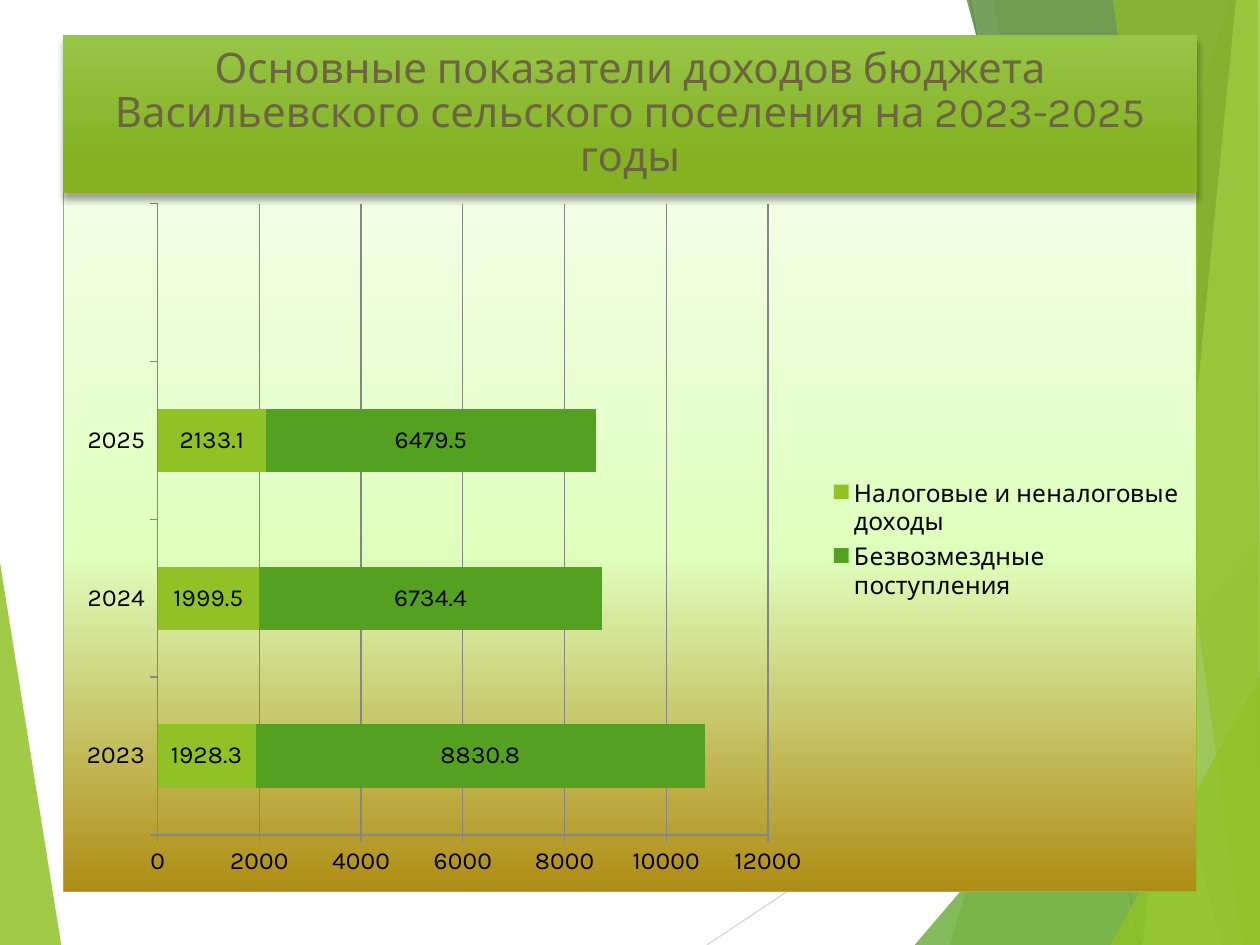
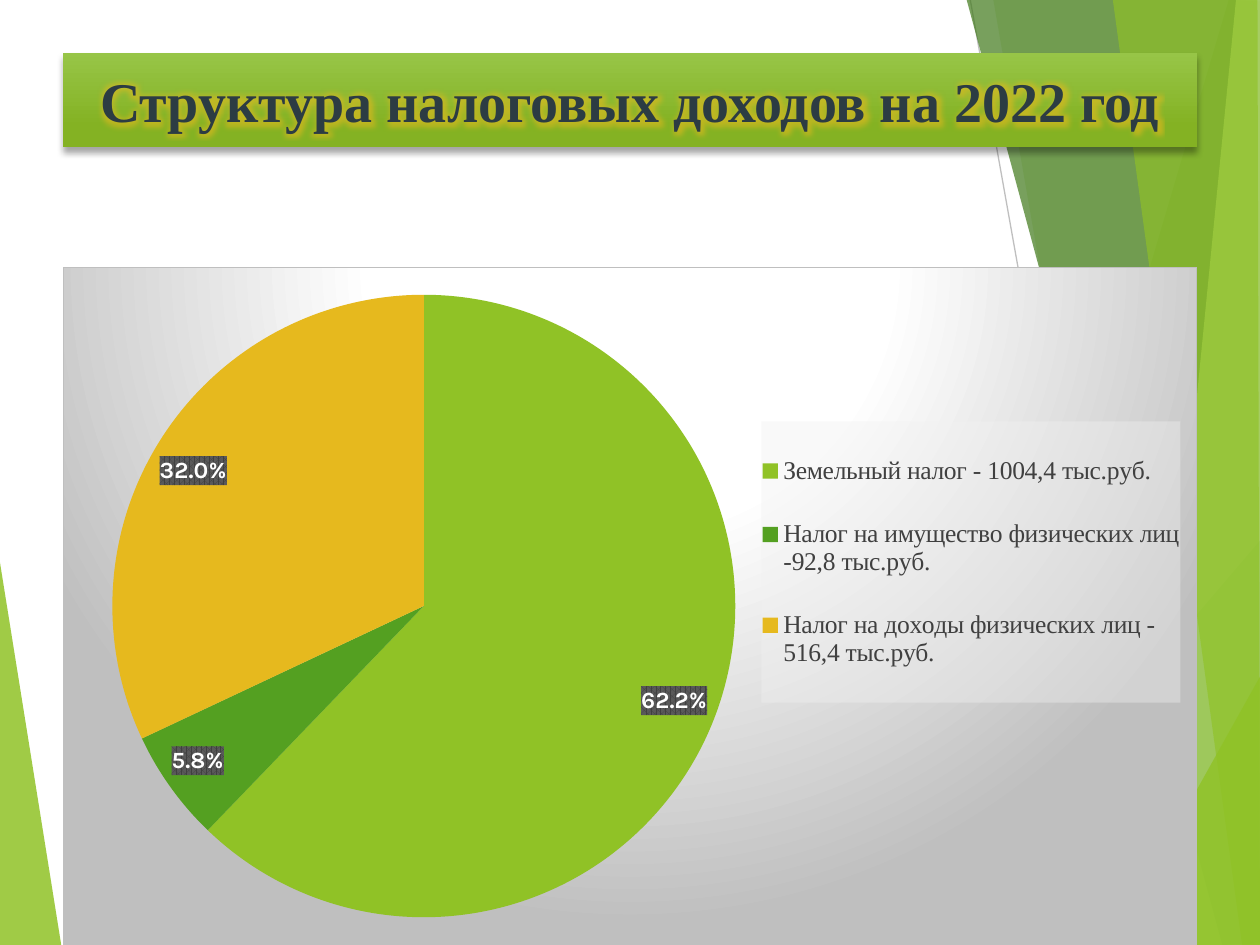
"""Build two slides on the budget revenues of a rural settlement."""
from pptx import Presentation
from pptx.chart.data import CategoryChartData as ChartData
from pptx.dml.color import RGBColor as RGB
from pptx.enum.chart import XL_CHART_TYPE as ChartType
from pptx.enum.chart import XL_LABEL_POSITION as LabelPos
from pptx.enum.chart import XL_LEGEND_POSITION as LegendPos
from pptx.enum.chart import XL_TICK_MARK as Tick
from pptx.enum.shapes import MSO_CONNECTOR as Connector
from pptx.enum.text import MSO_ANCHOR as Anchor
from pptx.enum.text import MSO_AUTO_SIZE as AutoSize
from pptx.enum.text import PP_ALIGN as Align
from pptx.oxml import parse_xml
from pptx.oxml.ns import nsdecls, qn
from pptx.util import Cm, Pt

LIME = RGB(0x90, 0xC2, 0x26)
GREEN = RGB(0x54, 0xA0, 0x21)
FOREST = RGB(0x3F, 0x78, 0x19)
PALE_LIME = RGB(0xC0, 0xE4, 0x74)
GOLD = RGB(0xE6, 0xB9, 0x1E)
TITLE_LIGHT = RGB(0x97, 0xC5, 0x47)
TITLE_DARK = RGB(0x84, 0xB2, 0x23)
OLIVE = RGB(0x6D, 0x65, 0x40)
SLATE = RGB(0x2C, 0x3C, 0x43)
OCHRE = RGB(0xAF, 0x8C, 0x14)
MINT = RGB(0xDF, 0xFF, 0xBD)
PALE_MINT = RGB(0xF2, 0xFF, 0xE6)
BLACK = RGB(0, 0, 0)
WHITE = RGB(0xFF, 0xFF, 0xFF)
CHARCOAL = RGB(0x40, 0x40, 0x40)
DARK_GREY = RGB(0x59, 0x59, 0x59)
AXIS_GREY = RGB(0x86, 0x86, 0x86)
SILVER = RGB(0xBF, 0xBF, 0xBF)
LIGHT_GREY = RGB(0xD9, 0xD9, 0xD9)
MIST = RGB(0xF2, 0xF2, 0xF2)
SANS = "Karla"
SERIF = "Times New Roman"

LEFT, WIDTH = 1.27, 22.86
LEFT_FACET = (LIME, 85, [(-0.03, 11.15), (1.24, 19.08), (-0.03, 19.05)])
RAYS = [
    (LIGHT_GREY, (14.25, 19.05, 25.43, 11.61)),
    (SILVER, (19.56, 0, 22.96, 19.05)),
]
RIGHT_FACETS = [
    (LIME, 30, [(24.77, 0), (19.15, 19.05), (25.45, 19.08), (25.43, 0.03)]),
    (LIME, 20, [(20.02, -0.03), (23.34, 19.05), (25.43, 19.05), (25.43, -0.03)]),
    (GREEN, 72, [(18.44, 19.05), (25.4, 10.9), (25.43, 19.05)]),
    (FOREST, 70, [(19.48, -0.03), (24.64, 19.05), (25.43, 19.02), (25.43, -0.03)]),
    (PALE_LIME, 70, [(24.92, -0.03), (23.04, 19.05), (25.43, 19.05), (25.4, -0.03)]),
    (LIME, 65, [(22.43, -0.03), (25.04, 19.05), (25.4, 19.05), (25.35, -0.03)]),
    (LIME, 80, [(22.38, 19.05), (25.43, 13.59), (25.43, 19.05)]),
]
LINEAR = '<a:lin ang="{}" scaled="0"/>'
FROM_TOP = ('<a:path path="circle"><a:fillToRect l="50000" t="-80000" '
            'r="50000" b="180000"/></a:path>')


def solid(color, alpha=100):
    return (f'<a:solidFill><a:srgbClr val="{color}"><a:alpha val="{alpha * 1000}"/>'
            '</a:srgbClr></a:solidFill>')


def gradient(stops, direction):
    marks = "".join(f'<a:gs pos="{pos * 1000}"><a:srgbClr val="{color}"/></a:gs>'
                    for pos, color in stops)
    return f'<a:gradFill {nsdecls("a")}><a:gsLst>{marks}</a:gsLst>{direction}</a:gradFill>'


def paint_chart_part(part, fill, border=""):
    properties = parse_xml(f'<c:spPr {nsdecls("c", "a")}>{fill}{border}</c:spPr>')
    part.find(qn("c:txPr")).addprevious(properties)


def place_chart_part(part, index, box, inner=False):
    for old in part.findall(qn("c:layout")):
        part.remove(old)
    target = '<c:layoutTarget val="inner"/>' if inner else ""
    modes = '<c:xMode val="edge"/><c:yMode val="edge"/>'
    sizes = "".join(f'<c:{side} val="{value}"/>' for side, value in zip("xywh", box))
    part.insert(index, parse_xml(
        f'<c:layout {nsdecls("c")}><c:manualLayout>{target}{modes}{sizes}'
        '</c:manualLayout></c:layout>'))


def style_font(font, name, size, color, bold=False):
    font.name, font.size, font.bold = name, Pt(size), bold
    font.color.rgb = color


class Deck:
    def __init__(self):
        self.show = Presentation()
        self.show.slide_width, self.show.slide_height = Cm(25.4), Cm(19.05)
        self.slide = None

    def new_slide(self):
        self.slide = self.show.slides.add_slide(self.show.slide_layouts[5])
        self.facet(*LEFT_FACET)
        for color, ends in RAYS:
            self.ray(color, ends)
        for facet in RIGHT_FACETS:
            self.facet(*facet)

    def facet(self, color, alpha, corners):
        start, *rest = [(Cm(x), Cm(y)) for x, y in corners]
        builder = self.slide.shapes.build_freeform(*start)
        builder.add_line_segments(rest)
        shape = builder.convert_to_shape()
        shape.shadow.inherit = False
        shape.fill.solid()
        shape.fill.fore_color.rgb = color
        tint = shape.element.spPr.find(qn("a:solidFill"))[0]
        tint.append(parse_xml(f'<a:alpha {nsdecls("a")} val="{alpha * 1000}"/>'))
        shape.line.fill.background()

    def ray(self, color, ends):
        ray = self.slide.shapes.add_connector(Connector.STRAIGHT, *map(Cm, ends))
        ray.line.color.rgb = color
        ray.line.width = Pt(0.75)
        ray.element.spPr.append(parse_xml(f'<a:effectLst {nsdecls("a")}/>'))

    def title(self, text, top, height, font, spacing=1.0, glow=None):
        title = self.slide.shapes.title
        title.left, title.top, title.width, title.height = map(
            Cm, (LEFT, top, WIDTH, height))
        properties = title.element.spPr
        properties.append(parse_xml(gradient(
            [(0, TITLE_LIGHT), (78, TITLE_DARK)], LINEAR.format(5400000))))
        properties.append(parse_xml(
            f'<a:effectLst {nsdecls("a")}><a:outerShdw blurRad="50800" dist="38100" '
            'dir="5400000" rotWithShape="0"><a:srgbClr val="000000">'
            '<a:alpha val="35000"/></a:srgbClr></a:outerShdw></a:effectLst>'))
        frame = title.text_frame
        frame.text = text
        frame.word_wrap, frame.auto_size = True, AutoSize.NONE
        frame.vertical_anchor = Anchor.MIDDLE
        paragraph = frame.paragraphs[0]
        paragraph.alignment, paragraph.line_spacing = Align.CENTER, spacing
        run = paragraph.runs[0]
        style_font(run.font, *font)
        if glow:
            run.font._element.find(qn("a:solidFill")).addnext(parse_xml(
                f'<a:effectLst {nsdecls("a")}><a:glow rad="101600">'
                f'<a:srgbClr val="{glow}"><a:alpha val="60000"/></a:srgbClr>'
                '</a:glow></a:effectLst>'))
        self.slide.shapes._spTree.append(title.element)

    def chart(self, kind, top, height, categories, series, backdrop, border,
              plot_box, legend_box, legend_font):
        data = ChartData()
        data.categories = categories
        for name, values in series:
            data.add_series(name, values)
        chart = self.slide.shapes.add_chart(
            kind, Cm(LEFT), Cm(top), Cm(WIDTH), Cm(height), data).chart
        chart.has_title = False
        style_font(chart.font, SANS, 14, BLACK)
        paint_chart_part(chart._chartSpace, backdrop,
                         f'<a:ln w="9525">{solid(border)}</a:ln>')
        place_chart_part(chart._chartSpace.chart.plotArea, 0, plot_box, inner=True)
        chart.has_legend = True
        legend = chart.legend
        legend.position, legend.include_in_layout = LegendPos.RIGHT, False
        style_font(legend.font, *legend_font)
        place_chart_part(legend._element, 1, legend_box)
        chart.plots[0].has_data_labels = True
        chart.plots[0].data_labels.show_value = True
        return chart

    def revenue_bars(self, years, revenues):
        backdrop = gradient([(0, OCHRE), (48, MINT), (100, PALE_MINT)],
                            LINEAR.format(16200000))
        chart = self.chart(ChartType.BAR_STACKED, 3.81, 14.17, years, revenues,
                           backdrop, LIME, (0.083, 0.02, 0.539, 0.9),
                           (0.675, 0.405, 0.315, 0.19), (SANS, 14, BLACK))
        bars = chart.plots[0]
        bars.gap_width, bars.overlap, bars.vary_by_categories = 150, 98, False
        style_font(bars.data_labels.font, SANS, 14, BLACK)
        for revenue, color in zip(bars.series, (LIME, GREEN)):
            revenue.format.fill.solid()
            revenue.format.fill.fore_color.rgb = color
        amounts = chart.value_axis
        amounts.minimum_scale, amounts.maximum_scale, amounts.major_unit = 0, 12000, 2000
        amounts.has_major_gridlines = True
        for axis in (chart.category_axis, amounts):
            axis.major_tick_mark, axis.minor_tick_mark = Tick.OUTSIDE, Tick.NONE
        for part in (chart.category_axis, amounts, amounts.major_gridlines):
            part.format.line.color.rgb = AXIS_GREY
            part.format.line.width = Pt(0.75)

    def tax_pie(self, taxes, shares):
        backdrop = gradient([(0, WHITE), (39, WHITE), (100, SILVER)], FROM_TOP)
        chart = self.chart(ChartType.PIE, 5.38, 13.69, taxes, [("Series 1", shares)],
                           backdrop, SILVER, (0.043, 0.04, 0.55, 0.919),
                           (0.616, 0.227, 0.37, 0.415), (SERIF, 14.6, CHARCOAL))
        paint_chart_part(chart.legend._element, solid(MIST, 39))
        pie = chart.plots[0]
        pie.vary_by_categories = True
        for index, color in enumerate((LIME, GREEN, GOLD)):
            fill = pie.series[0].points[index].format.fill
            fill.solid()
            fill.fore_color.rgb = color
        labels = pie.data_labels
        style_font(labels.font, SANS, 13.3, WHITE, True)
        labels.number_format, labels.number_format_is_linked = "0.0%", False
        labels.position = LabelPos.BEST_FIT
        paint_chart_part(labels._element, (
            f'<a:pattFill prst="pct75"><a:fgClr><a:srgbClr val="{CHARCOAL}"/></a:fgClr>'
            f'<a:bgClr><a:srgbClr val="{DARK_GREY}"/></a:bgClr></a:pattFill>'))


def main():
    deck = Deck()
    deck.new_slide()
    deck.revenue_bars(["2023", "2024", "2025", ""], [
        ("Налоговые и неналоговые доходы", (1928.3, 1999.5, 2133.1, None)),
        ("Безвозмездные поступления", (8830.8, 6734.4, 6479.5, None)),
    ])
    deck.title("Основные показатели доходов бюджета Васильевского сельского "
               "поселения на 2023-2025 годы", 0.71, 3.18, (SANS, 24, OLIVE), spacing=0.88)

    deck.new_slide()
    deck.tax_pie(["Земельный налог - 1004,4 тыс.руб.",
                  "Налог на имущество физических лиц -92,8 тыс.руб.",
                  "Налог на доходы физических лиц - 516,4 тыс.руб."],
                 (0.622, 0.058, 0.32))
    deck.title("Структура налоговых доходов на 2022 год", 1.07, 1.9,
               (SERIF, 32, SLATE, True), glow=GOLD)
    deck.show.save("out.pptx")


if __name__ == "__main__":
    main()
